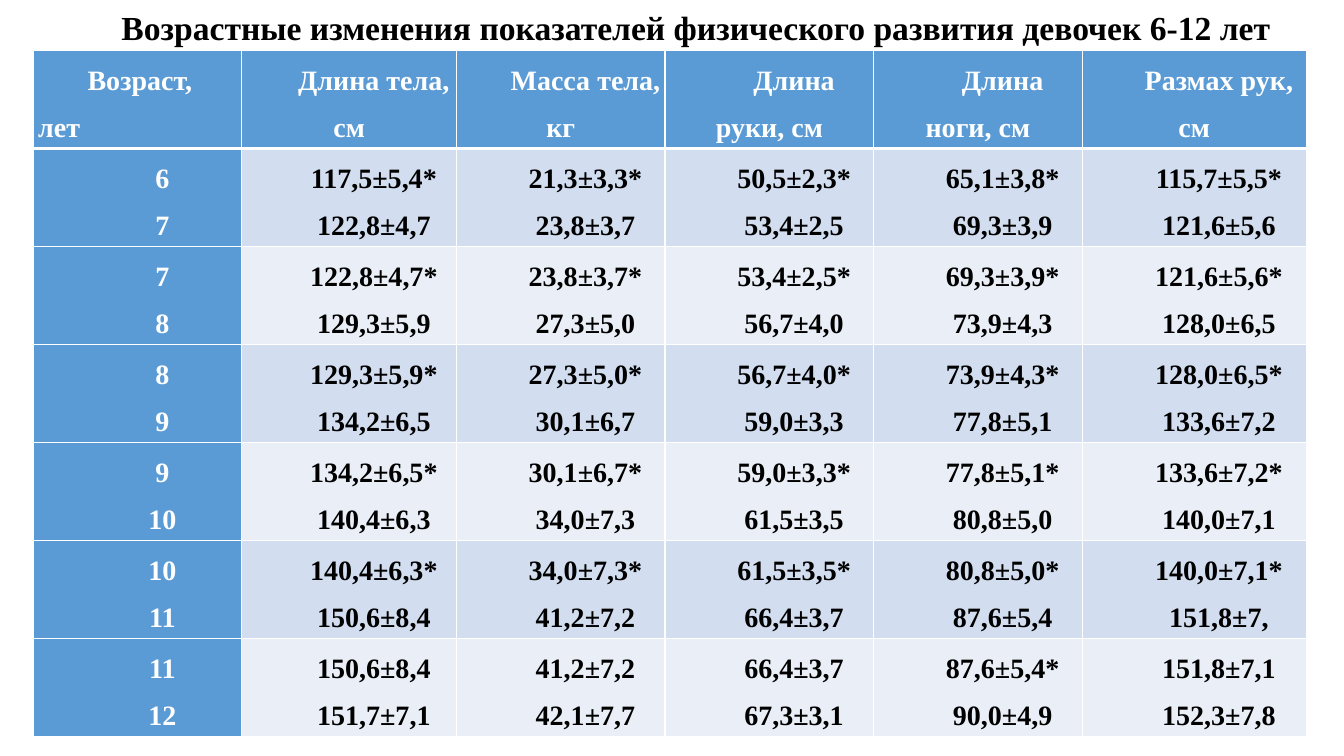
from dataclasses import dataclass

from lxml.etree import SubElement
from pptx import Presentation
from pptx.dml.color import RGBColor
from pptx.enum.text import MSO_ANCHOR, MSO_AUTO_SIZE, PP_ALIGN
from pptx.oxml.ns import qn
from pptx.util import Pt

FONT = "Times New Roman"
COLOURS = {
    "black": "000000",
    "white": "FFFFFF",
    "heading": "5B9BD5",
    "dark band": "D2DEEF",
    "light band": "EAEFF7",
}
COLUMN_WIDTHS = (148.7, 153.4, 149, 149, 149, 160)
ROW_HEIGHT = 70
SIDE_MARGIN = 3.25
FIRST_LINE_INDENT = 35.3
THIN, THICK = 1, 3


@dataclass(frozen=True)
class AgePair:
    """Two neighbouring ages, each with its readings in column order."""
    younger: str
    older: str

    def cells(self) -> list[list[str]]:
        return [list(pair) for pair in zip(self.younger.split(), self.older.split())]


HEADINGS = ("Возраст, лет", "Длина тела, см", "Масса тела, кг",
            "Длина руки, см", "Длина ноги, см", "Размах рук, см")
AGE_PAIRS = (
    AgePair("6 117,5±5,4* 21,3±3,3* 50,5±2,3* 65,1±3,8* 115,7±5,5*",
            "7 122,8±4,7 23,8±3,7 53,4±2,5 69,3±3,9 121,6±5,6"),
    AgePair("7 122,8±4,7* 23,8±3,7* 53,4±2,5* 69,3±3,9* 121,6±5,6*",
            "8 129,3±5,9 27,3±5,0 56,7±4,0 73,9±4,3 128,0±6,5"),
    AgePair("8 129,3±5,9* 27,3±5,0* 56,7±4,0* 73,9±4,3* 128,0±6,5*",
            "9 134,2±6,5 30,1±6,7 59,0±3,3 77,8±5,1 133,6±7,2"),
    AgePair("9 134,2±6,5* 30,1±6,7* 59,0±3,3* 77,8±5,1* 133,6±7,2*",
            "10 140,4±6,3 34,0±7,3 61,5±3,5 80,8±5,0 140,0±7,1"),
    AgePair("10 140,4±6,3* 34,0±7,3* 61,5±3,5* 80,8±5,0* 140,0±7,1*",
            "11 150,6±8,4 41,2±7,2 66,4±3,7 87,6±5,4 151,8±7,"),
    AgePair("11 150,6±8,4 41,2±7,2 66,4±3,7 87,6±5,4* 151,8±7,1",
            "12 151,7±7,1 42,1±7,7 67,3±3,1 90,0±4,9 152,3±7,8"),
)


def write_text(para, text: str, *, size: float, colour: str, align=PP_ALIGN.CENTER,
               spacing: float = 1.0, indent: float = 0) -> None:
    """Put one bold span into a paragraph."""
    para.alignment = align
    para.line_spacing = spacing
    para.space_before = para.space_after = Pt(0)
    if indent:
        properties = para._p.get_or_add_pPr()
        properties.set("marL", "0")
        properties.set("indent", str(int(Pt(indent))))
    span = para.add_run()
    span.text = text
    span.font.name = FONT
    span.font.size = Pt(size)
    span.font.bold = True
    span.font.color.rgb = RGBColor.from_string(COLOURS[colour])


def draw_borders(cell, **widths: float) -> None:
    """Outline a cell in white; the widths are keyed by side: L, R, T, B."""
    properties = cell._tc.get_or_add_tcPr()
    for side, width in widths.items():
        line = SubElement(properties, qn(f"a:ln{side}"), w=str(int(Pt(width))))
        fill = SubElement(line, qn("a:solidFill"))
        SubElement(fill, qn("a:srgbClr"), val=COLOURS["white"])


def fill_cell(cell, lines: list[str], row: int, column: int) -> None:
    is_heading = row == 0 or column == 0
    band = "dark band" if row % 2 else "light band"
    draw_borders(cell, L=THIN, R=THIN, T=THICK if row == 1 else THIN,
                 B=THICK if row == 0 else THIN)
    cell.fill.solid()
    cell.fill.fore_color.rgb = RGBColor.from_string(
        COLOURS["heading" if is_heading else band])
    cell.margin_left = cell.margin_right = Pt(SIDE_MARGIN)
    cell.margin_top = cell.margin_bottom = Pt(0)
    frame = cell.text_frame
    for index, text in enumerate(lines):
        para = frame.add_paragraph() if index else frame.paragraphs[0]
        write_text(para, text, size=20, colour="white" if is_heading else "black",
                   align=PP_ALIGN.LEFT if row == column == 0 else PP_ALIGN.CENTER,
                   spacing=1.5, indent=FIRST_LINE_INDENT)


def add_title(page) -> None:
    box = page.shapes.title
    box.left, box.top, box.width, box.height = Pt(59.76), Pt(8), Pt(874.8), Pt(28)
    frame = box.text_frame
    frame.auto_size = MSO_AUTO_SIZE.NONE
    frame.word_wrap = True
    frame.vertical_anchor = MSO_ANCHOR.TOP
    frame.margin_top = frame.margin_bottom = Pt(0)
    write_text(frame.paragraphs[0],
               "Возрастные изменения показателей физического развития девочек 6-12 лет",
               size=24, colour="black", spacing=0.9)


def add_growth_table(page) -> None:
    rows = [[[heading] for heading in HEADINGS]] + [pair.cells() for pair in AGE_PAIRS]
    table = page.shapes.add_table(
        len(rows), len(HEADINGS), Pt(24), Pt(36),
        Pt(sum(COLUMN_WIDTHS)), Pt(ROW_HEIGHT * len(rows))).table
    table.first_col = True
    for column, width in zip(table.columns, COLUMN_WIDTHS):
        column.width = Pt(width)
    for row, cells in enumerate(rows):
        table.rows[row].height = Pt(ROW_HEIGHT)
        for column, lines in enumerate(cells):
            fill_cell(table.cell(row, column), lines, row, column)


def main() -> None:
    deck = Presentation()
    deck.slide_width, deck.slide_height = Pt(960), Pt(540)
    page = deck.slides.add_slide(deck.slide_layouts[5])
    # Title above, table below
    add_title(page)
    add_growth_table(page)
    deck.save("out.pptx")


if __name__ == "__main__":
    main()
